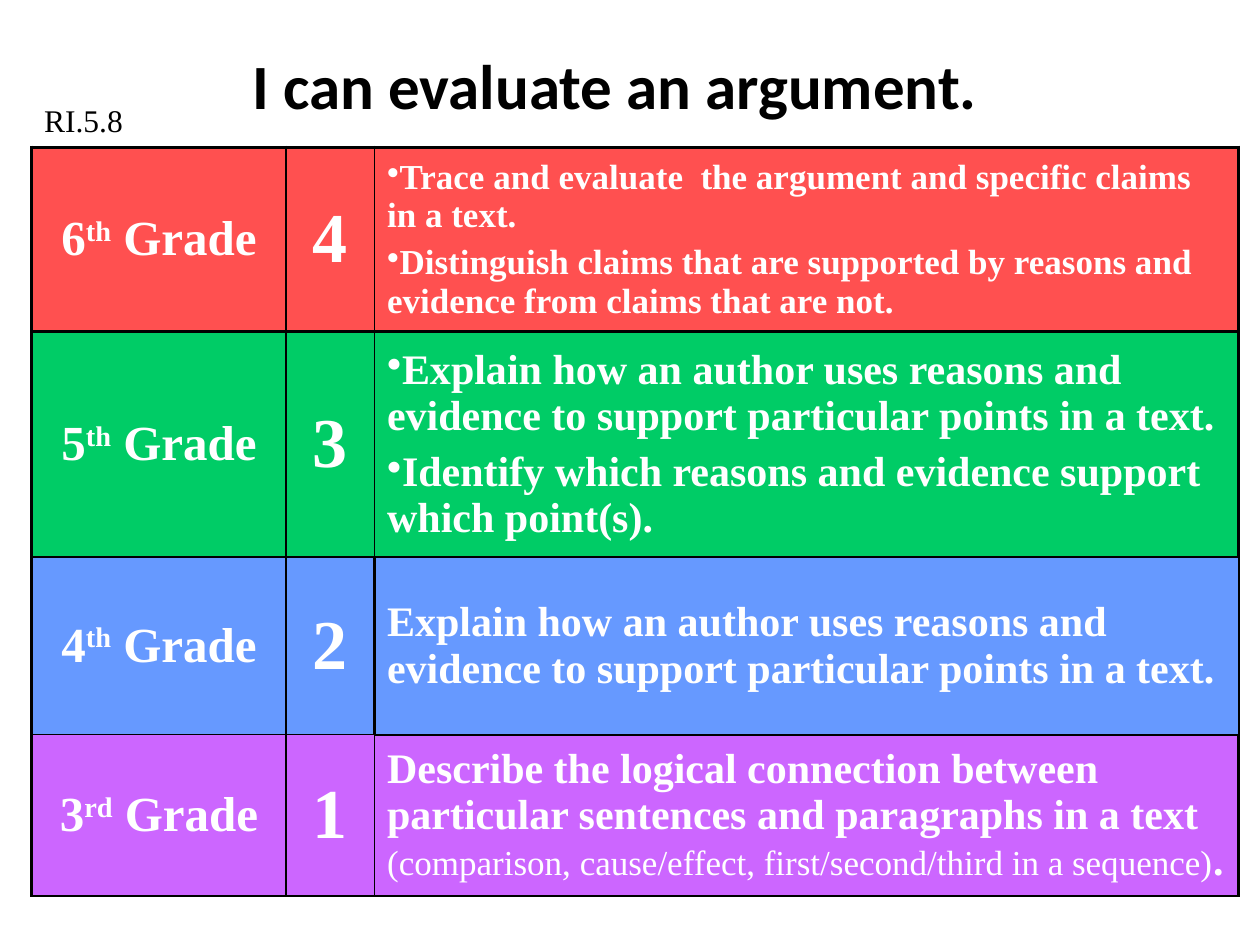
from dataclasses import dataclass
from lxml.etree import SubElement
from pptx import Presentation
from pptx.dml.color import RGBColor
from pptx.enum.text import MSO_ANCHOR, MSO_AUTO_SIZE, PP_ALIGN
from pptx.oxml.ns import qn
from pptx.util import Cm, Pt


@dataclass(frozen=True)
class Theme:
    head: str = "Calibri"
    body: str = "Times New Roman"
    ink: str = "000000"
    light: str = "FFFFFF"
    red: str = "FF5050"
    green: str = "00CC66"
    blue: str = "6699FF"
    purple: str = "CC66FF"
    title: int = 36
    score: int = 40
    grade: int = 28
    large: int = 24
    small: int = 20
    note: int = 18


class Deck:
    def __init__(self, theme):
        self.theme = theme
        self.file = Presentation()
        self.file.slide_width, self.file.slide_height = Cm(25.4), Cm(19.05)
        self.slide = self.file.slides.add_slide(self.file.slide_layouts[5])

    def run(self, para, text, size, face=None, color=None, bold=True, lift=0):
        run = para.add_run()
        run.text = text
        look = {"name": face or self.theme.body, "size": Pt(size), "bold": bold}
        for key, value in look.items():
            setattr(run.font, key, value)
        run.font.color.rgb = RGBColor.from_string(color or self.theme.light)
        if lift:
            run.font._element.set("baseline", str(lift * 1000))

    def title(self, text, box):
        shape = self.slide.shapes.title
        for key, value in zip(("left", "top", "width", "height"), box):
            setattr(shape, key, Cm(value))
        shape.text_frame.vertical_anchor = MSO_ANCHOR.MIDDLE
        para = shape.text_frame.paragraphs[0]
        para.alignment = PP_ALIGN.CENTER
        self.run(para, text, self.theme.title, self.theme.head, self.theme.ink)

    def label(self, text, box):
        frame = self.slide.shapes.add_textbox(*map(Cm, box)).text_frame
        frame.word_wrap = True
        frame.auto_size = MSO_AUTO_SIZE.SHAPE_TO_FIT_TEXT
        self.run(frame.paragraphs[0], text, self.theme.note,
                 color=self.theme.ink, bold=False)

    def table(self, spot, cols, rows):
        shape = self.slide.shapes.add_table(
            len(rows), len(cols), *map(Cm, (*spot, sum(cols), sum(rows))))
        grid = shape.table
        for key in ("first_row", "horz_banding"):
            setattr(grid, key, False)
        for col, width in zip(grid.columns, cols):
            col.width = Cm(width)
        for row, height in zip(grid.rows, rows):
            row.height = Cm(height)
        return grid

    def cell(self, cell, fill, edges, paras, align=PP_ALIGN.LEFT, bullet=False):
        """Each paragraph is a list of (text, size, extra run format)."""
        cell.vertical_anchor = MSO_ANCHOR.MIDDLE
        props = cell._tc.get_or_add_tcPr()
        for side, width in zip("LRTB", edges):
            line = SubElement(props, qn(f"a:ln{side}"), w=str(Pt(width)))
            paint = SubElement(line, qn("a:solidFill"))
            SubElement(paint, qn("a:srgbClr"), val=self.theme.ink)
        cell.fill.solid()
        cell.fill.fore_color.rgb = RGBColor.from_string(fill)
        frame = cell.text_frame
        for i, parts in enumerate(paras):
            para = frame.add_paragraph() if i else frame.paragraphs[0]
            para.alignment = align
            para.space_before = Pt(round(parts[0][1] * 0.22, 1))
            if bullet:
                SubElement(para._p.get_or_add_pPr(), qn("a:buChar"), char="•")
            for text, size, extra in parts:
                self.run(para, text, size, **extra)


def main():
    theme = Theme()
    deck = Deck(theme)
    big, small = theme.large, theme.small

    # Heading and standard code
    deck.title("I can evaluate an argument.", (0.43, 0.43, 23.93, 2.54))

    # Rubric: grade, suffix, score, fill, bullets shown, goals
    support = ("Explain how an author uses reasons and evidence to support "
               "particular points in a text.")
    levels = [
        ("6", "th", "4", theme.red, True, [
            [("Trace and evaluate  the argument and specific claims in a text.",
              small, {})],
            [("Distinguish claims that are supported by reasons and evidence "
              "from claims that are not.", small, {})]]),
        ("5", "th", "3", theme.green, True, [
            [(support, big, {})],
            [("Identify which reasons and evidence support which point(s).",
              big, {})]]),
        ("4", "th", "2", theme.blue, False, [[(support, big, {})]]),
        ("3", "rd", "1", theme.purple, False, [[
            ("Describe the logical connection between particular sentences "
             "and paragraphs in a text ", big, {}),
            ("(comparison, cause/effect, first/second/third in a sequence)",
             small, {"bold": False}),
            (".", big, {})]]),
    ]
    # Rule widths from top to bottom: left columns, then goal column
    rules = [2.25, 1.5, 1, 1, 1.5]
    goals = [2.25, 1.5, 1.5, 1.5, 1.5]
    grid = deck.table((0.64, 2.97), (5.13, 1.78, 17.42), (3.71, 4.55, 3.58, 3.25))
    for i, (grade, suffix, score, fill, bullet, text) in enumerate(levels):
        blue = fill == theme.blue
        inner, outer = (1.5, 1.5) if blue else (1, 2.25)
        split = 1.5 if blue else 1
        level = [(grade, theme.grade, {}), (suffix, theme.grade, {"lift": 30}),
                 (" Grade", theme.grade, {})]
        deck.cell(grid.cell(i, 0), fill, (2.25, inner, *rules[i:i + 2]),
                  [level], PP_ALIGN.CENTER)
        deck.cell(grid.cell(i, 1), fill, (inner, split, *rules[i:i + 2]),
                  [[(score, theme.score, {})]], PP_ALIGN.CENTER)
        deck.cell(grid.cell(i, 2), fill, (split, outer, *goals[i:i + 2]),
                  text, bullet=bullet)

    deck.label("RI.5.8", (0.64, 1.91, 3.61, 1.02))
    deck.file.save("out.pptx")


if __name__ == "__main__":
    main()
